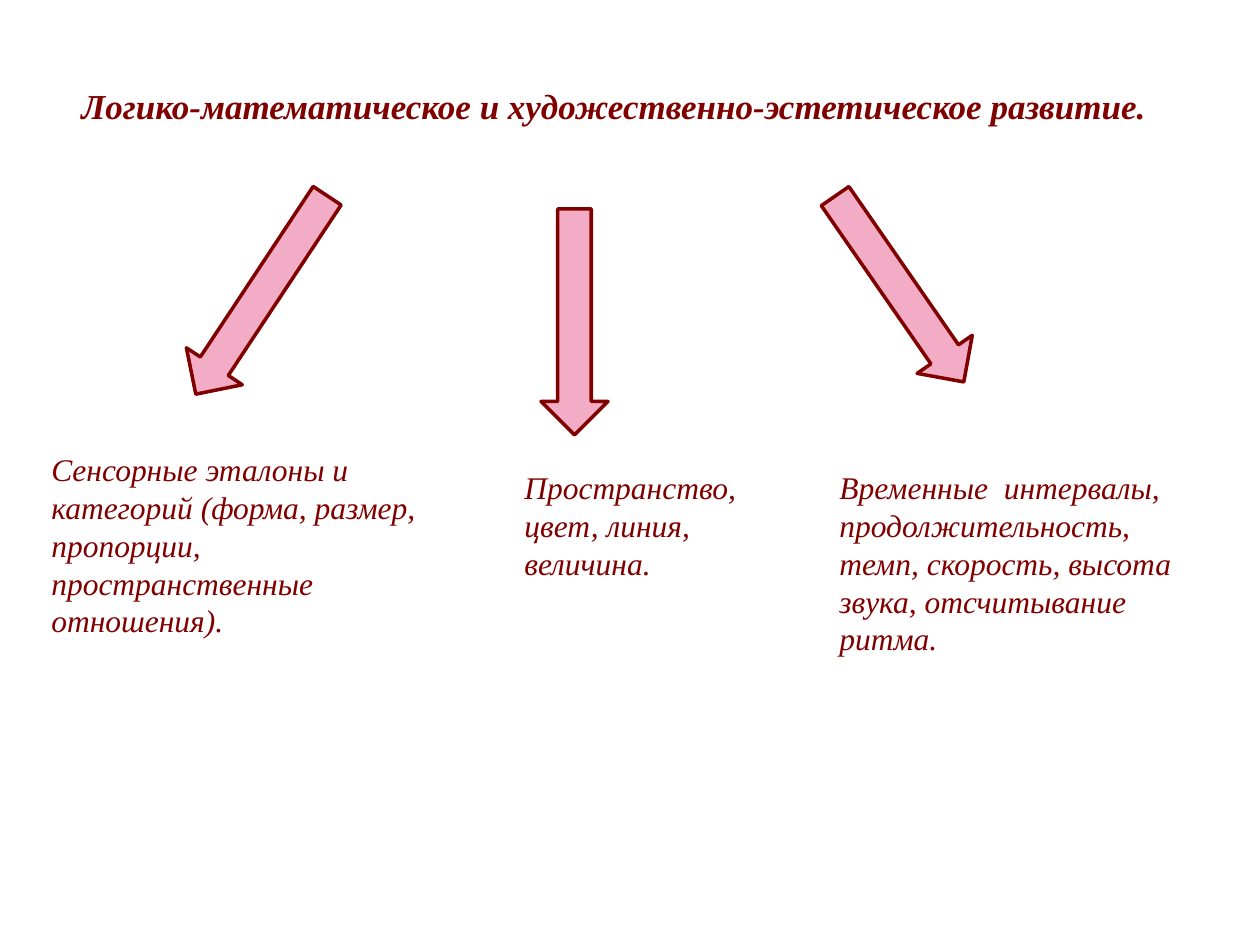
import pptx
import pptx.util
import pptx.dml.color
import pptx.enum.shapes
import pptx.enum.text

PX = 914400 / 126
COLORS = {"maroon": "800000", "pink": "F2ACC5"}
FONT = "Times New Roman"

TITLE = ("Логико-математическое и художественно-эстетическое развитие.", (69, 78, 1113, 55))
BRANCHES = [
    {"text": "Сенсорные эталоны и категорий (форма, размер, пропорции, пространственные отношения).",
     "box": (39, 444, 393, 204), "arrow": (228, 176, 67, 238), "angle": 33.5},
    {"text": "Пространство, цвет, линия, величина.",
     "box": (512, 462, 246, 127), "arrow": (541, 209, 67, 226), "angle": 0},
    {"text": "Временные  интервалы, продолжительность, темп, скорость, высота звука, отсчитывание ритма.",
     "box": (827, 462, 364, 204), "arrow": (866, 176, 67, 226), "angle": 325.3},
]


def emu(box):
    return [pptx.util.Emu(round(v * PX)) for v in box]


def rgb(name):
    return pptx.dml.color.RGBColor.from_string(COLORS[name])


def add_text(s, text, box, size, bold=False):
    tf = s.shapes.add_textbox(*emu(box)).text_frame
    tf.word_wrap = True
    tf.auto_size = pptx.enum.text.MSO_AUTO_SIZE.SHAPE_TO_FIT_TEXT
    p = tf.paragraphs[0]
    p.text = text
    p.font.name = FONT
    p.font.size = pptx.util.Pt(size)
    p.font.bold = bold
    p.font.italic = True
    p.font.color.rgb = rgb("maroon")


def add_arrow(s, box, angle):
    sp = s.shapes.add_shape(pptx.enum.shapes.MSO_SHAPE.DOWN_ARROW, *emu(box))
    sp.rotation = angle
    sp.shadow.inherit = False
    sp.fill.solid()
    sp.fill.fore_color.rgb = rgb("pink")
    sp.line.color.rgb = rgb("maroon")
    sp.line.width = pptx.util.Pt(2)


def main():
    prs = pptx.Presentation()
    prs.slide_width, prs.slide_height = emu((1260, 945))
    s = prs.slides.add_slide(prs.slide_layouts[6])
    add_text(s, *TITLE, 20, bold=True)
    for branch in BRANCHES:
        add_arrow(s, branch["arrow"], branch["angle"])
    for branch in BRANCHES:
        add_text(s, branch["text"], branch["box"], 18)
    prs.save("out.pptx")


if __name__ == "__main__":
    main()
